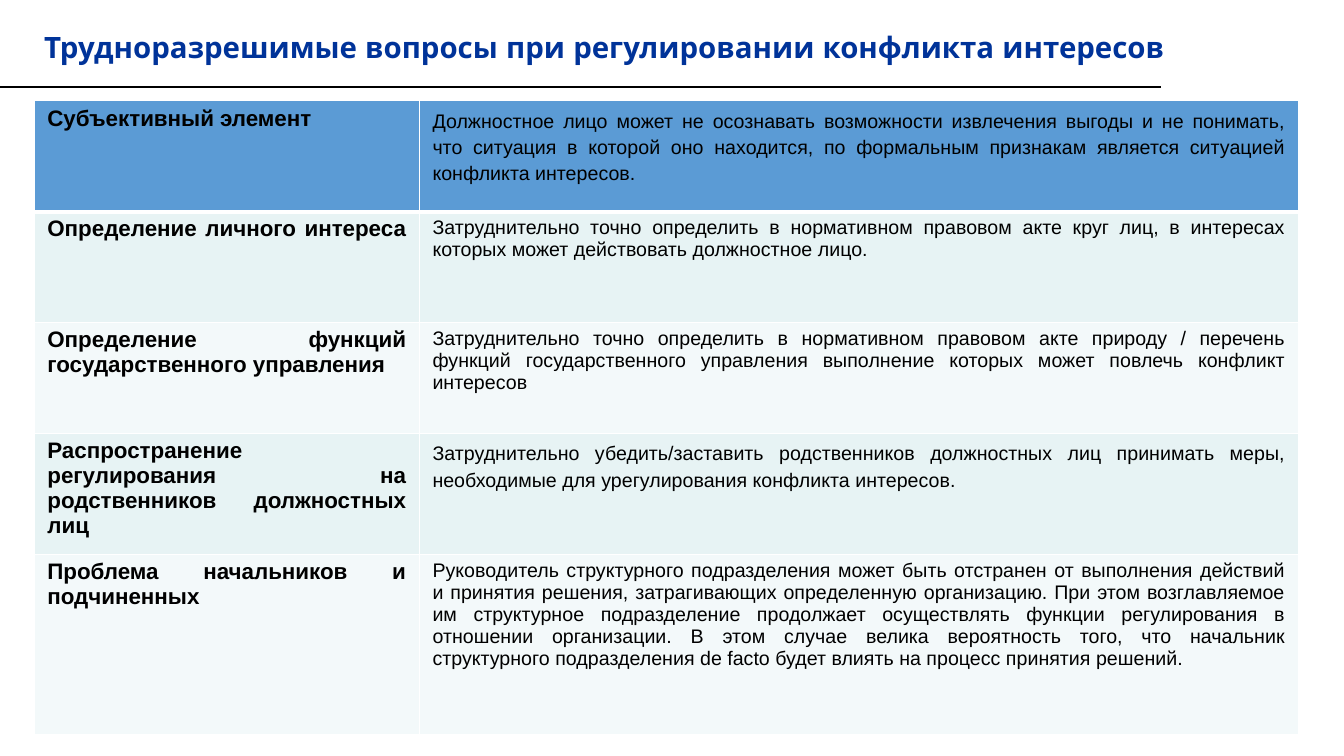
"""Build a slide with a table of hard questions in regulating conflicts of interest."""
import dataclasses

import lxml.etree
import pptx
import pptx.dml.color
import pptx.enum.shapes
import pptx.enum.text
import pptx.oxml
import pptx.oxml.ns
import pptx.util

Inches = pptx.util.Inches
Pt = pptx.util.Pt
qn = pptx.oxml.ns.qn


@dataclasses.dataclass(frozen=True)
class Theme:
    """Colours, fonts and type sizes of the slide."""
    title_font: str = "Quicksand"
    body_font: str = "Arial"
    title_size: int = 21
    topic_size: int = 16
    detail_size: int = 14
    title: str = "003399"
    ink: str = "000000"
    border: str = "FFFFFF"
    header: str = "5B9BD5"
    bands: tuple = ("E7F3F4", "F3F9FA")


THEME = Theme()
TITLE = "Трудноразрешимые вопросы при регулировании конфликта интересов"
COLUMN_WIDTHS = (3.82, 8.72)

# Each row: height, topic, detail, whether the detail is set with loose spacing.
ROWS = (
    (1.1, "Субъективный элемент ",
     "Должностное лицо может не осознавать возможности извлечения выгоды и не понимать, "
     "что ситуация в которой оно находится, по формальным признакам является ситуацией "
     "конфликта интересов.", True),
    (1.1, "Определение личного интереса ",
     "Затруднительно точно определить в нормативном правовом акте круг лиц, в интересах "
     "которых может действовать должностное лицо. ", False),
    (1.1, "Определение функций государственного управления ",
     "Затруднительно точно определить в нормативном правовом акте природу / перечень "
     "функций государственного управления выполнение которых может повлечь конфликт "
     "интересов", False),
    (1.2, "Распространение регулирования на родственников должностных лиц",
     "Затруднительно убедить/заставить родственников должностных лиц принимать меры, "
     "необходимые для урегулирования конфликта интересов.", True),
    (1.79, "Проблема начальников и подчиненных ",
     "Руководитель структурного подразделения может быть отстранен от выполнения действий "
     "и принятия решения, затрагивающих определенную организацию. При этом возглавляемое "
     "им структурное подразделение продолжает осуществлять функции регулирования в "
     "отношении организации. В этом случае велика вероятность того, что начальник "
     "структурного подразделения de facto будет влиять на процесс принятия решений.", False),
)


def rgb(value):
    """Turn a hex string into a colour."""
    return pptx.dml.color.RGBColor.from_string(value)


def style_text(para, font, size, colour, bold):
    """Format every run of a paragraph."""
    for span in para.runs:
        span.font.name = font
        span.font.size = Pt(size)
        span.font.color.rgb = rgb(colour)
        span.font.bold = bold


def add_title(page):
    """Add the heading above the rule."""
    box = page.shapes.add_textbox(Inches(0.34), Inches(0.09), Inches(12.54), Inches(0.79))
    frame = box.text_frame
    frame.word_wrap = True
    frame.vertical_anchor = pptx.enum.text.MSO_ANCHOR.MIDDLE
    frame.text = TITLE
    para = frame.paragraphs[0]
    para.line_spacing = 0.9
    style_text(para, THEME.title_font, THEME.title_size, THEME.title, True)


def add_rule(page):
    """Add the line under the heading."""
    rule = page.shapes.add_connector(
        pptx.enum.shapes.MSO_CONNECTOR.STRAIGHT,
        Inches(0), Inches(0.86), Inches(11.52), Inches(0.86))
    rule.line.color.rgb = rgb(THEME.ink)
    rule.line.width = Pt(1.5)
    lxml.etree.SubElement(rule._element.spPr, qn("a:effectLst"))


def set_borders(cell, widths):
    """Draw the cell borders from widths in points, keyed by side."""
    properties = cell._tc.get_or_add_tcPr()
    for index, side in enumerate("LRTB"):
        line = pptx.oxml.parse_xml(
            f'<a:ln{side} xmlns:a="http://schemas.openxmlformats.org/drawingml/2006/main" '
            f'w="{Pt(widths.get(side, 1))}"><a:solidFill><a:srgbClr val="{THEME.border}"/>'
            f'</a:solidFill></a:ln{side}>')
        properties.insert(index, line)


def fill_cell(cell, text, size, bold, loose, fill, borders):
    """Write one justified cell with its fill and borders."""
    cell.margin_left = cell.margin_right = Inches(0.13)
    cell.margin_top = cell.margin_bottom = Inches(0.05)
    cell.fill.solid()
    cell.fill.fore_color.rgb = rgb(fill)
    cell.text_frame.text = text
    para = cell.text_frame.paragraphs[0]
    para.alignment = pptx.enum.text.PP_ALIGN.JUSTIFY
    if loose:
        para.line_spacing = 1.2
        para.space_before = Pt(6)
    style_text(para, THEME.body_font, size, THEME.ink, bold)
    set_borders(cell, borders)


def add_question_table(page):
    """Add the table of topics and details."""
    height = sum(row[0] for row in ROWS)
    table = page.shapes.add_table(
        len(ROWS), len(COLUMN_WIDTHS), Inches(0.34), Inches(1),
        Inches(sum(COLUMN_WIDTHS)), Inches(height)).table
    for column, width in zip(table.columns, COLUMN_WIDTHS):
        column.width = Inches(width)
    for index, (row_height, topic, detail, loose) in enumerate(ROWS):
        table.rows[index].height = Inches(row_height)
        fill = THEME.bands[(index - 1) % 2] if index else THEME.header
        borders = {0: {"B": 3}, 1: {"T": 3}}.get(index, {})
        fill_cell(table.cell(index, 0), topic, THEME.topic_size, True, False, fill, borders)
        fill_cell(table.cell(index, 1), detail, THEME.detail_size, False, loose, fill, borders)


def main():
    """Build and save the deck."""
    deck = pptx.Presentation()
    deck.slide_width = Inches(13.33)
    deck.slide_height = Inches(7.5)
    page = deck.slides.add_slide(deck.slide_layouts[6])
    add_title(page)
    add_rule(page)
    add_question_table(page)
    deck.save("out.pptx")


if __name__ == "__main__":
    main()
